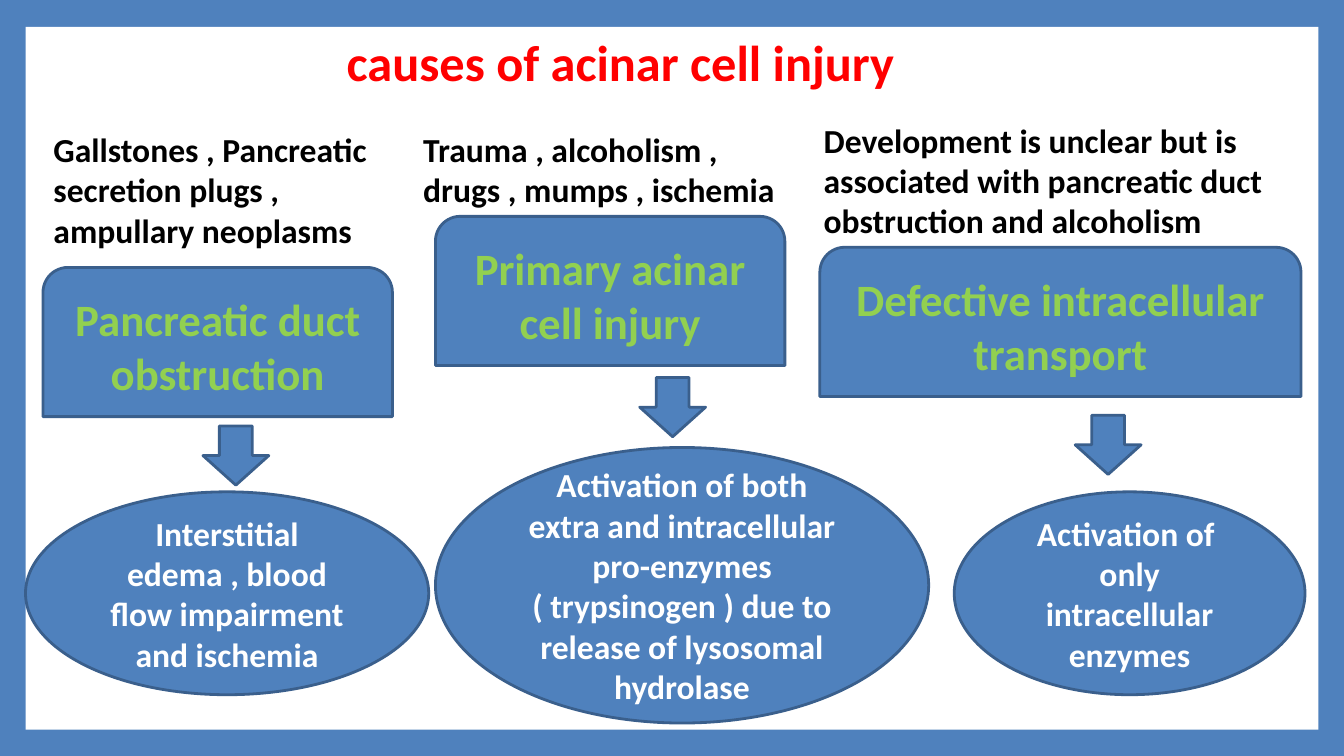
from dataclasses import dataclass

from pptx import Presentation
from pptx.dml.color import RGBColor
from pptx.enum import shapes, text
from pptx.util import Inches, Pt

COLORS = {"blue": "4F81BD", "edge": "3A5F8C", "white": "FFFFFF",
          "black": "000000", "red": "FF0000", "green": "92D050"}
KINDS = shapes.MSO_SHAPE
ALIGN = text.PP_ALIGN
Box = tuple[float, float, float, float]


@dataclass
class Cause:
    factors: str
    factors_box: Box
    mechanism: str
    mechanism_box: Box
    arrow_at: tuple[float, float]
    effect: str
    effect_box: Box


CAUSES = [
    Cause("Gallstones , Pancreatic secretion plugs , ampullary neoplasms",
          (0.3, 0.91, 2.84, 1.01),
          "Pancreatic duct obstruction", (0.32, 1.99, 2.6, 1.11), (1.51, 3.17),
          "Interstitial edema , blood flow impairment and ischemia",
          (0.19, 3.66, 3, 1.51)),
    Cause("Trauma , alcoholism , drugs , mumps , ischemia",
          (3.05, 0.91, 2.98, 0.71),
          "Primary acinar cell injury", (3.24, 1.61, 2.6, 1.11), (4.76, 2.81),
          "Activation of both extra and intracellular pro-enzymes "
          "( trypsinogen ) due to release of lysosomal hydrolase",
          (3.24, 3.33, 3.67, 2.05)),
    Cause("Development is unclear but is associated with pancreatic duct "
          "obstruction and alcoholism",
          (6.03, 0.84, 3.68, 1.01),
          "Defective intracellular transport", (6.1, 1.84, 3.58, 1.11), (8, 3.09),
          "Activation of  only intracellular enzymes", (7.1, 3.66, 2.61, 1.51)),
]


def rgb(name: str) -> RGBColor:
    return RGBColor.from_string(COLORS[name])


def write(sp, words: str, size: float, color: str, align, anchor) -> None:
    tf = sp.text_frame
    tf.word_wrap = True
    tf.vertical_anchor = anchor
    p = tf.paragraphs[0]
    p.alignment = align
    r = p.add_run()
    r.text = words
    font = {"name": "Calibri", "size": Pt(size), "bold": True}
    for key, value in font.items():
        setattr(r.font, key, value)
    r.font.color.rgb = rgb(color)


def add_label(s, box: Box, words: str, size: float, color: str, align) -> None:
    sp = s.shapes.add_textbox(*map(Inches, box))
    write(sp, words, size, color, align, text.MSO_ANCHOR.TOP)
    sp.text_frame.auto_size = text.MSO_AUTO_SIZE.SHAPE_TO_FIT_TEXT


def add_filled(s, kind, box: Box, fill: str):
    sp = s.shapes.add_shape(kind, *map(Inches, box))
    sp.shadow.inherit = False
    sp.fill.solid()
    sp.fill.fore_color.rgb = rgb(fill)
    return sp


def add_block(s, kind, box: Box, words: str = "", size: float = 18,
              color: str = "white") -> None:
    sp = add_filled(s, kind, box, "blue")
    sp.line.color.rgb = rgb("edge")
    sp.line.width = Pt(1.5)
    if words:
        write(sp, words, size, color, ALIGN.CENTER, text.MSO_ANCHOR.MIDDLE)


def add_panel(s) -> None:
    s.background.fill.solid()
    s.background.fill.fore_color.rgb = rgb("blue")
    sp = add_filled(s, KINDS.RECTANGLE, (0.19, 0.2, 9.62, 5.23), "white")
    sp.line.fill.background()


def main() -> None:
    prs = Presentation()
    prs.slide_width, prs.slide_height = Inches(10), Inches(10 * 9 / 16)
    s = prs.slides.add_slide(prs.slide_layouts[6])
    add_panel(s)
    add_label(s, (0.11, 0.18, 9.1, 0.56), "causes of acinar cell injury ",
              27, "red", ALIGN.CENTER)
    for cause in CAUSES:
        add_block(s, KINDS.ROUND_2_SAME_RECTANGLE, cause.mechanism_box,
                  cause.mechanism, 24, "green")
    for cause in CAUSES:
        add_block(s, KINDS.DOWN_ARROW, (*cause.arrow_at, 0.49, 0.44))
    for cause in CAUSES:
        add_block(s, KINDS.OVAL, cause.effect_box, cause.effect)
    for cause in CAUSES:
        add_label(s, cause.factors_box, cause.factors, 18, "black", ALIGN.LEFT)
    prs.save("out.pptx")


if __name__ == "__main__":
    main()
